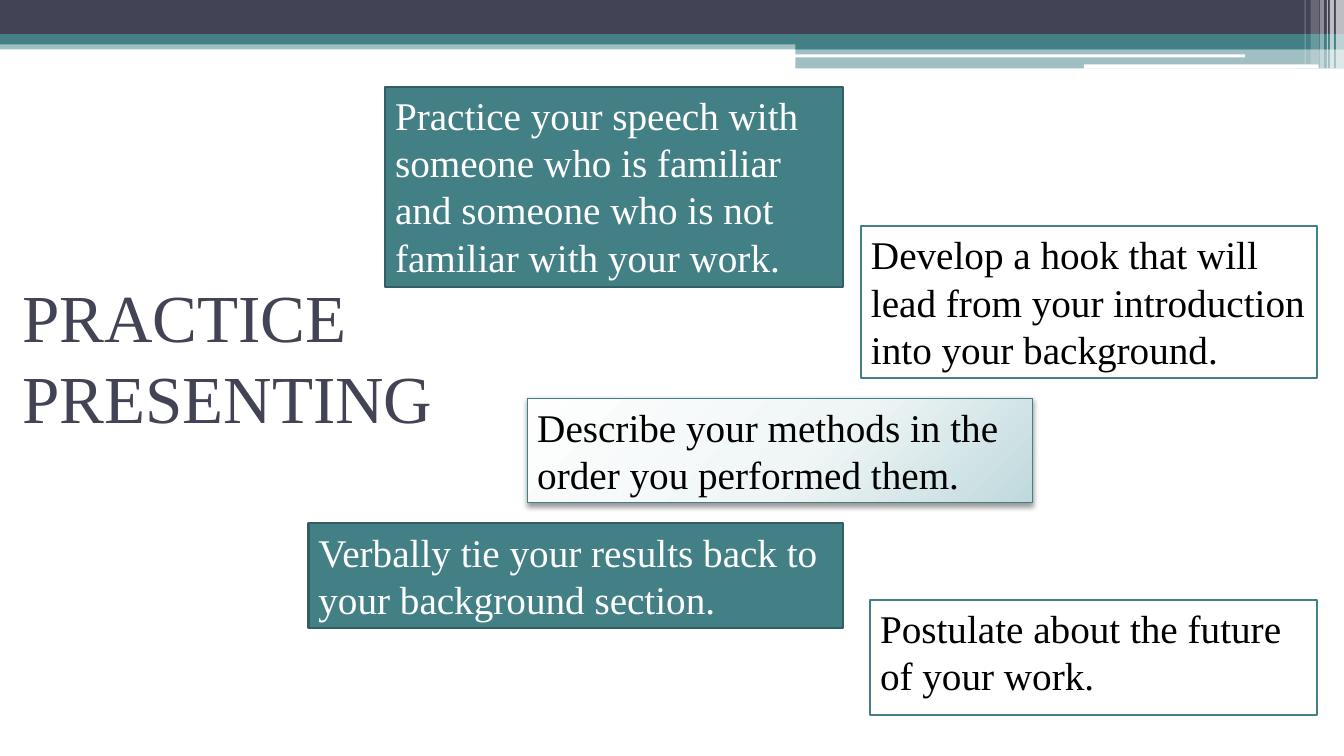
from lxml import etree
from pptx import Presentation
from pptx.dml.color import RGBColor
from pptx.enum.shapes import MSO_SHAPE as Shape
from pptx.enum.text import MSO_ANCHOR as Anchor, PP_ALIGN as Align
from pptx.oxml import parse_xml
from pptx.oxml.ns import nsdecls, qn
from pptx.util import Inches, Pt

COLORS = {
    "navy": "424456",
    "teal": "438086",
    "dark teal": "325F63",
    "white": "FFFFFF",
    "black": "000000",
}
FONT = "Times New Roman"

presentation = Presentation()
presentation.slide_width = Inches(13.33)
presentation.slide_height = Inches(7.5)
slide = presentation.slides.add_slide(presentation.slide_layouts[6])


def add_block(box, color, opacity=100, kind=Shape.RECTANGLE):
    """Add a borderless filled shape; box is left, top, width, height in inches."""
    shape = slide.shapes.add_shape(kind, *map(Inches, box))
    shape.shadow.inherit = False
    shape.fill.solid()
    shape.fill.fore_color.rgb = RGBColor.from_string(COLORS[color])
    shape.line.fill.background()
    if opacity < 100:
        color_element = shape.fill._xPr.find(".//" + qn("a:srgbClr"))
        etree.SubElement(color_element, qn("a:alpha"), val=str(opacity * 1000))
    return shape


def write_text(shape, text, size, color, anchor):
    frame = shape.text_frame
    frame.word_wrap = True
    frame.vertical_anchor = anchor
    paragraph = frame.paragraphs[0]
    paragraph.text = text
    paragraph.alignment = Align.LEFT
    paragraph.font.name = FONT
    paragraph.font.size = Pt(size)
    paragraph.font.color.rgb = RGBColor.from_string(COLORS[color])


# Header bands
for box, color, opacity in [
    ((0, 0.4, 13.33, 0.09), "teal", 50),
    ((0, 0, 13.33, 0.34), "navy", 100),
    ((0, 0.34, 13.33, 0.1), "teal", 100),
    ((7.89, 0.39, 5.44, 0.1), "teal", 100),
    ((7.89, 0.48, 5.44, 0.2), "teal", 50),
]:
    add_block(box, color, opacity)

for box in [(7.88, 0.54, 4.47, 0.03), (10.75, 0.64, 2.33, 0.04)]:
    add_block(box, "white", kind=Shape.ROUNDED_RECTANGLE)

# Translucent stripes at the right end of the header
for left, width, height, opacity in [
    (13.25, 0.08, 0.68, 65),
    (13.19, 0.04, 0.68, 65),
    (13.16, 0.01, 0.68, 60),
    (13.09, 0.04, 0.68, 40),
    (13, 0.08, 0.64, 20),
    (12.94, 0.01, 0.64, 30),
]:
    add_block((left, 0, width, height), "white", opacity)

title = slide.shapes.add_textbox(Inches(0.12), Inches(2.69), Inches(5.11), Inches(1.68))
write_text(title, "PRACTICE PRESENTING", 48, "navy", Anchor.MIDDLE)

# Advice boxes: fill, border, border width and text colour by style
STYLES = {
    "filled": ("teal", "dark teal", 1.5, "white"),
    "outlined": ("white", "teal", 1.5, "black"),
    "shaded": ("white", "teal", 0.75, "black"),
}
advice_boxes = [
    ((8.63, 5.95, 4.43, 1.14), "outlined", "Postulate about the future of your work."),
    ((3.82, 0.86, 4.54, 1.99), "filled",
     "Practice your speech with someone who is familiar and someone who is not "
     "familiar with your work."),
    ((8.54, 2.24, 4.52, 1.51), "outlined",
     "Develop a hook that will lead from your introduction into your background."),
    ((5.23, 3.95, 5.01, 1.04), "shaded",
     "Describe your methods in the order you performed them."),
    ((3.06, 5.19, 5.3, 1.04), "filled",
     "Verbally tie your results back to your background section."),
]
for box, style, text in advice_boxes:
    fill, border, border_width, text_color = STYLES[style]
    shape = add_block(box, fill)
    shape.line.color.rgb = RGBColor.from_string(COLORS[border])
    shape.line.width = Pt(border_width)
    write_text(shape, text, 28, text_color, Anchor.TOP)
    if style == "shaded":
        properties = shape._element.spPr
        stops = "".join(
            f'<a:gs pos="{position * 1000}"><a:srgbClr val="{color}"/></a:gs>'
            for position, color in [(0, "FEFEFE"), (55, "F0F6F6"), (100, "BFD9DD")]
        )
        gradient = parse_xml(
            f'<a:gradFill {nsdecls("a")} rotWithShape="1"><a:gsLst>{stops}</a:gsLst>'
            '<a:path path="circle"><a:fillToRect l="-40000" t="-90000" r="140000" '
            'b="190000"/></a:path></a:gradFill>'
        )
        properties.replace(properties.find(qn("a:solidFill")), gradient)
        shadow = parse_xml(
            f'<a:outerShdw {nsdecls("a")} blurRad="{Pt(4.1)}" dist="{Pt(2)}" '
            'dir="5400000" rotWithShape="0"><a:srgbClr val="000000">'
            '<a:alpha val="40000"/></a:srgbClr></a:outerShdw>'
        )
        properties.find(qn("a:effectLst")).append(shadow)

presentation.save("out.pptx")
